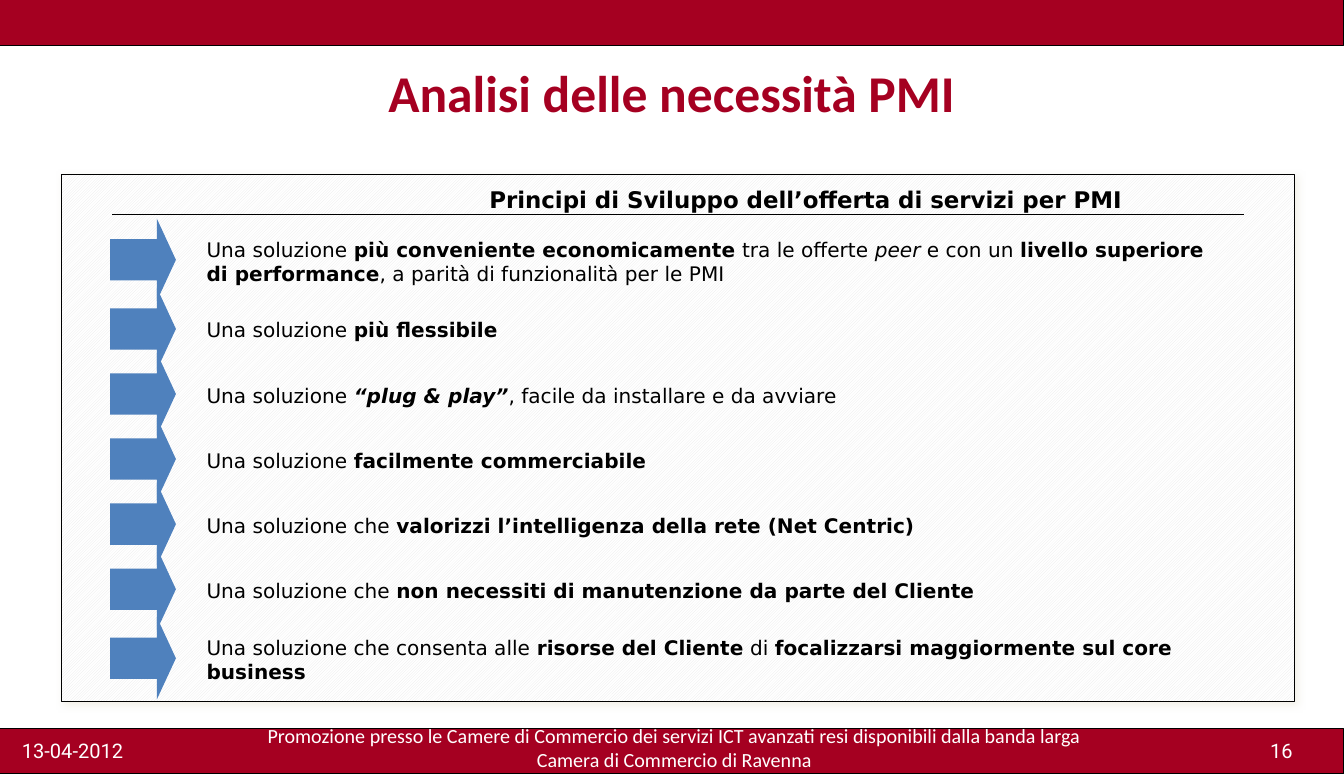
from lxml import etree
from pptx import Presentation
from pptx.dml.color import RGBColor
from pptx.enum.dml import MSO_PATTERN_TYPE
from pptx.enum.shapes import MSO_CONNECTOR, MSO_SHAPE
from pptx.enum.text import MSO_ANCHOR, MSO_AUTO_SIZE, PP_ALIGN
from pptx.oxml import parse_xml
from pptx.oxml.ns import nsdecls, qn
from pptx.util import Pt

RECT, ARROW = MSO_SHAPE.RECTANGLE, MSO_SHAPE.RIGHT_ARROW
LEFT, CENTER, RIGHT = PP_ALIGN.LEFT, PP_ALIGN.CENTER, PP_ALIGN.RIGHT
MIDDLE = MSO_ANCHOR.MIDDLE
FIT, STRAIGHT = MSO_AUTO_SIZE.SHAPE_TO_FIT_TEXT, MSO_CONNECTOR.STRAIGHT
HATCH = MSO_PATTERN_TYPE.LIGHT_UPWARD_DIAGONAL

RED = RGBColor(0xA5, 0x00, 0x21)
BLUE = RGBColor(0x4F, 0x81, 0xBD)
GREY = RGBColor(0xE8, 0xE8, 0xE8)
WHITE = RGBColor(0xFF, 0xFF, 0xFF)
BLACK = RGBColor(0, 0, 0)

# Content: each principle is (lines, runs), each run (text, style letters)
TITLE = "Analisi delle necessità PMI"
HEADING = "Principi di Sviluppo dell’offerta di servizi per PMI"
PRINCIPLES = [
    (2, [("Una soluzione ", ""), ("più conveniente economicamente", "b"),
         (" tra le offerte ", ""), ("peer", "i"), (" e con un ", ""),
         ("livello superiore di performance", "b"),
         (", a parità di funzionalità per le PMI", "")]),
    (1, [("Una soluzione ", ""), ("più flessibile", "b")]),
    (1, [("Una soluzione ", ""), ("“plug & play”", "bi"),
         (", facile da installare e da avviare", "")]),
    (1, [("Una soluzione ", ""), ("facilmente commerciabile", "b")]),
    (1, [("Una soluzione che ", ""),
         ("valorizzi l’intelligenza della rete (Net Centric)", "b")]),
    (1, [("Una soluzione che ", ""),
         ("non necessiti di manutenzione da parte del Cliente", "b")]),
    (2, [("Una soluzione che consenta alle ", ""), ("risorse del Cliente", "b"),
         (" di ", ""), ("focalizzarsi maggiormente sul core business", "b")]),
]
FOOTER = ["Promozione presso le Camere di Commercio dei servizi ICT avanzati "
          "resi disponibili dalla banda larga",
          "Camera di Commercio di Ravenna"]
DATE, NUMBER = "13-04-2012", "16"

# Geometry in points
SLIDE_W, SLIDE_H, BAND_H = 938.16, 540, 31.7
FOOTER_CENTER, FOOTER_W = 470.75, 640
FIRST_CENTER = 181.3
SLOT = {1: 45.4, 2: 51}
TEXT_H = {1: 24.5, 2: 41}
ARROW_X, ARROW_W, ARROW_H = 76.8, 46, 57.6
TEXT_X, TEXT_W = 137.1, 728

ITEM = dict(name="DejaVu Sans", size=Pt(14))
HEAD = dict(name="DejaVu Sans", size=Pt(16), bold=True)
FOOT = dict(name="Calibri", size=Pt(14))
STAMP = dict(name="Roboto", size=Pt(14))
TITLE_FONT = dict(name="Calibri", size=Pt(36), bold=True)


def set_font(font, fmt, color):
    for key, value in fmt.items():
        setattr(font, key, value)
    font.color.rgb = color


def add_box(s, kind, x, y, w, h, color=None, outline=True):
    sp = s.shapes.add_shape(kind, Pt(x), Pt(y), Pt(w), Pt(h))
    sp.shadow.inherit = False
    if color is not None:
        sp.fill.solid()
        sp.fill.fore_color.rgb = color
    if outline:
        sp.line.color.rgb = BLACK
        sp.line.width = Pt(0.75)
    else:
        sp.line.fill.background()
    return sp


def add_text(s, x, y, w, h, paragraphs, fmt, color=BLACK, align=LEFT, label=False):
    """Paragraphs are lists of (text, style) runs; a label has no insets or wrap."""
    tf = s.shapes.add_textbox(Pt(x), Pt(y), Pt(w), Pt(h)).text_frame
    tf.word_wrap = not label
    if label:
        tf.margin_left = tf.margin_right = tf.margin_top = tf.margin_bottom = 0
    else:
        tf.auto_size = FIT
    for i, runs in enumerate(paragraphs):
        p = tf.add_paragraph() if i else tf.paragraphs[0]
        p.alignment = align
        for text, style in runs:
            r = p.add_run()
            r.text = text
            set_font(r.font, dict(bold="b" in style, italic="i" in style) | fmt, color)


def add_panel(s):
    panel = add_box(s, RECT, 42.9, 121.7, 861, 368)
    panel.fill.patterned()
    panel.fill.pattern = HATCH
    panel.fill.fore_color.rgb = GREY
    panel.fill.back_color.rgb = WHITE
    effects = panel._element.spPr.find(qn("a:effectLst"))
    effects.append(parse_xml(
        f'<a:outerShdw {nsdecls("a")} blurRad="{Pt(5)}" dist="{Pt(3)}" dir="2700000">'
        '<a:srgbClr val="EEECE1"><a:alpha val="75000"/></a:srgbClr></a:outerShdw>'))


def add_principles(s):
    center = FIRST_CENTER - SLOT[PRINCIPLES[0][0]] / 2
    for lines, runs in PRINCIPLES:
        center += SLOT[lines] / 2
        arrow = add_box(s, ARROW, ARROW_X, center - ARROW_H / 2,
                        ARROW_W, ARROW_H, BLUE, outline=False)
        arrow.adjustments[0] = 0.5
        arrow.adjustments[1] = 0.29
        add_text(s, TEXT_X, center + 1 - TEXT_H[lines] / 2, TEXT_W, TEXT_H[lines],
                 [runs], ITEM)
        center += SLOT[lines] / 2


def main():
    prs = Presentation()
    prs.slide_width, prs.slide_height = Pt(SLIDE_W), Pt(SLIDE_H)
    s = prs.slides.add_slide(prs.slide_layouts[5])

    # Bands and footer
    for y in (0, SLIDE_H - BAND_H):
        add_box(s, RECT, 0, y, SLIDE_W, BAND_H, RED)
    add_text(s, FOOTER_CENTER - FOOTER_W / 2, 505, FOOTER_W, 34,
             [[(line, "")] for line in FOOTER], FOOT, WHITE, CENTER, label=True)
    add_text(s, 15.3, 515.5, 86, 17, [[(DATE, "")]], STAMP, WHITE, label=True)
    add_text(s, 866, 515.5, 57, 17, [[(NUMBER, "")]], STAMP, WHITE, CENTER, label=True)

    # Title
    title = s.shapes.title
    title.left, title.top, title.width, title.height = Pt(47), Pt(32), Pt(844), Pt(64)
    title.text_frame.text = TITLE
    title.text_frame.vertical_anchor = MIDDLE
    p = title.text_frame.paragraphs[0]
    p.alignment = CENTER
    set_font(p.runs[0].font, TITLE_FONT, RED)

    # Panel with its principles
    add_panel(s)
    add_principles(s)

    # Heading and rule
    add_text(s, 156.8, 126, 633.5, 26.5, [[(HEADING, "")]], HEAD, align=RIGHT)
    rule = s.shapes.add_connector(STRAIGHT, Pt(78.5), Pt(149.75), Pt(868.5), Pt(149.75))
    rule.line.color.rgb = BLACK
    rule.line.width = Pt(1)
    etree.SubElement(rule._element.spPr, qn("a:effectLst"))

    prs.save("out.pptx")


if __name__ == "__main__":
    main()
